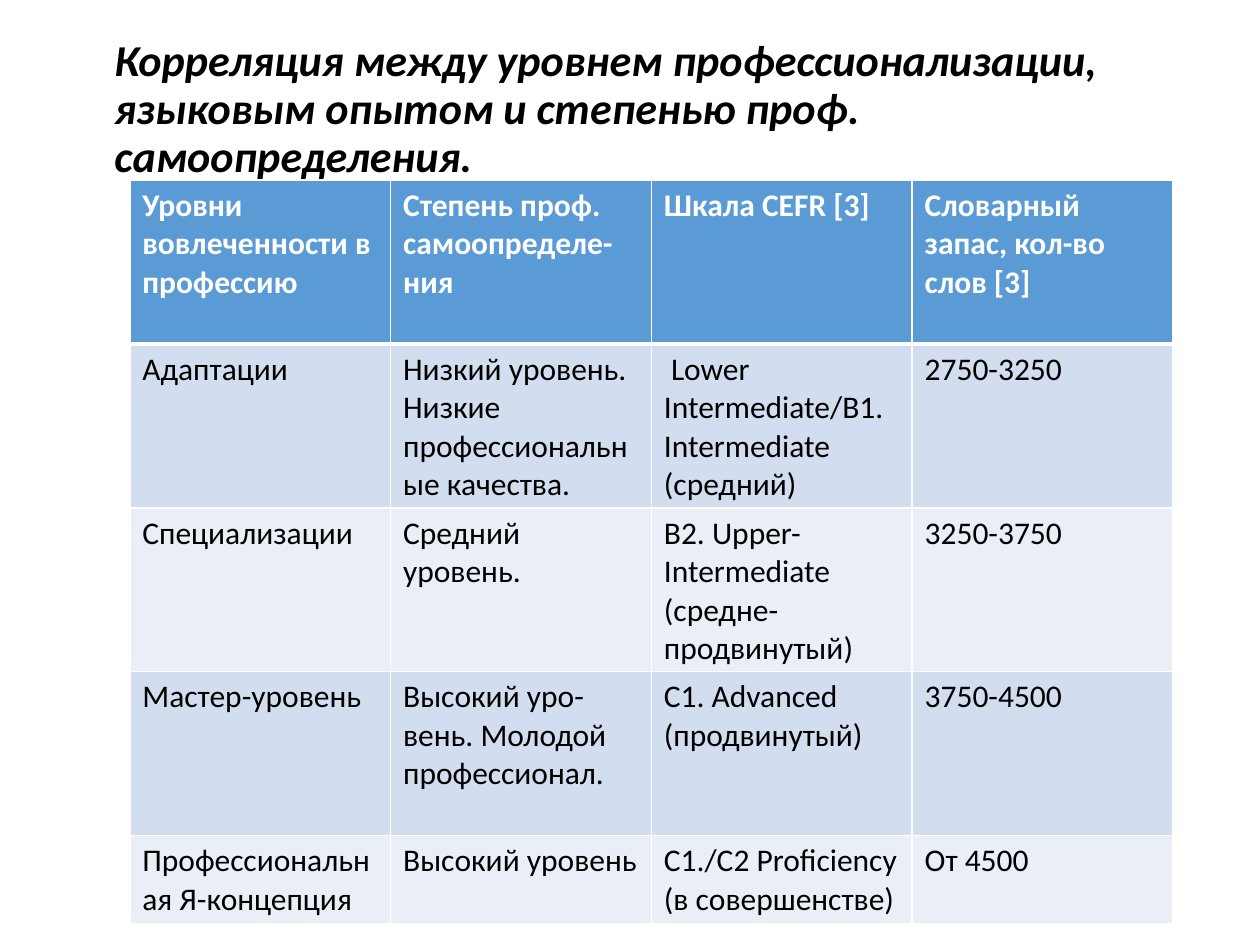
import dataclasses
from typing import Any

import lxml.etree
import pptx
import pptx.dml.color
import pptx.enum.text
import pptx.oxml.ns
import pptx.util

Inches = pptx.util.Inches
Pt = pptx.util.Pt


@dataclasses.dataclass(frozen=True)
class Theme:
    font: str = "Calibri"
    title_size: float = 25.2
    cell_size: float = 18
    black: str = "000000"
    white: str = "FFFFFF"
    header: str = "5B9BD5"
    bands: tuple[str, str] = ("D2DEEF", "EAEFF7")
    line: float = 1
    header_line: float = 3


@dataclasses.dataclass(frozen=True)
class Row:
    cells: tuple[str, str, str, str]
    height: float = 1.3


THEME = Theme()
TITLE = ("Корреляция между уровнем профессионализации, языковым опытом "
         "и степенью проф. самоопределения.")
ROWS = (
    Row(("Уровни вовлеченности в профессию", "Степень проф. самоопределе-ния",
         "Шкала CEFR [3]", "Словарный запас, кол-во слов [3]")),
    Row(("Адаптации", "Низкий уровень. Низкие профессиональные качества.",
         " Lower Intermediate/B1. Intermediate (средний)", "2750-3250")),
    Row(("Специализации", "Средний уровень.",
         "B2. Upper- Intermediate (средне-продвинутый)", "3250-3750")),
    Row(("Мастер-уровень", "Высокий уро-вень. Молодой профессионал.",
         "C1. Advanced (продвинутый)", "3750-4500")),
    Row(("Профессиональная Я-концепция", "Высокий уровень",
         "С1./C2 Proficiency (в совершенстве)", "От 4500"), 0.7),
)
COLUMN_WIDTH = 2.07


def rgb(color: str) -> pptx.dml.color.RGBColor:
    return pptx.dml.color.RGBColor.from_string(color)


def write(p: Any, text: str, color: str, formats: dict[str, Any]) -> None:
    r = p.add_run()
    r.text = text
    r.font.color.rgb = rgb(color)
    for name, value in {"name": THEME.font, **formats}.items():
        setattr(r.font, name, value)


def add_title(slide: Any) -> None:
    sp = slide.shapes.add_textbox(Inches(0.81), Inches(0.4), Inches(8.5), Inches(0.95))
    tf = sp.text_frame
    tf.word_wrap = True
    tf.vertical_anchor = pptx.enum.text.MSO_ANCHOR.MIDDLE
    p = tf.paragraphs[0]
    p.line_spacing = 0.9
    write(p, TITLE, THEME.black,
          {"size": Pt(THEME.title_size), "bold": True, "italic": True})


def set_borders(cell: Any, widths: dict[str, float]) -> None:
    qn = pptx.oxml.ns.qn
    props = cell._tc.get_or_add_tcPr()
    for i, (side, width) in enumerate(widths.items()):
        ln = lxml.etree.Element(qn(f"a:{side}"), w=str(Pt(width)))
        fill = lxml.etree.SubElement(ln, qn("a:solidFill"))
        lxml.etree.SubElement(fill, qn("a:srgbClr"), val=THEME.white)
        props.insert(i, ln)


def fill_row(table: Any, index: int, row: Row) -> None:
    is_header = index == 0
    fill = THEME.header if is_header else THEME.bands[(index - 1) % 2]
    color = THEME.white if is_header else THEME.black
    widths = {side: THEME.line for side in ("lnL", "lnR", "lnT", "lnB")}
    if is_header:
        widths["lnB"] = THEME.header_line
    elif index == 1:
        widths["lnT"] = THEME.header_line
    table.rows[index].height = Inches(row.height)
    for cell, text in zip(table.rows[index].cells, row.cells):
        cell.fill.solid()
        cell.fill.fore_color.rgb = rgb(fill)
        write(cell.text_frame.paragraphs[0], text, color,
              {"size": Pt(THEME.cell_size), "bold": is_header})
        set_borders(cell, widths)


def add_levels_table(slide: Any) -> None:
    columns = len(ROWS[0].cells)
    frame = slide.shapes.add_table(
        len(ROWS), columns, Inches(1.03), Inches(1.43),
        Inches(columns * COLUMN_WIDTH), Inches(sum(row.height for row in ROWS)))
    for index, row in enumerate(ROWS):
        fill_row(frame.table, index, row)


def main() -> None:
    prs = pptx.Presentation()
    prs.slide_width, prs.slide_height = Inches(10), Inches(7.5)
    slide = prs.slides.add_slide(prs.slide_layouts[6])
    add_title(slide)
    add_levels_table(slide)
    prs.save("out.pptx")


if __name__ == "__main__":
    main()
